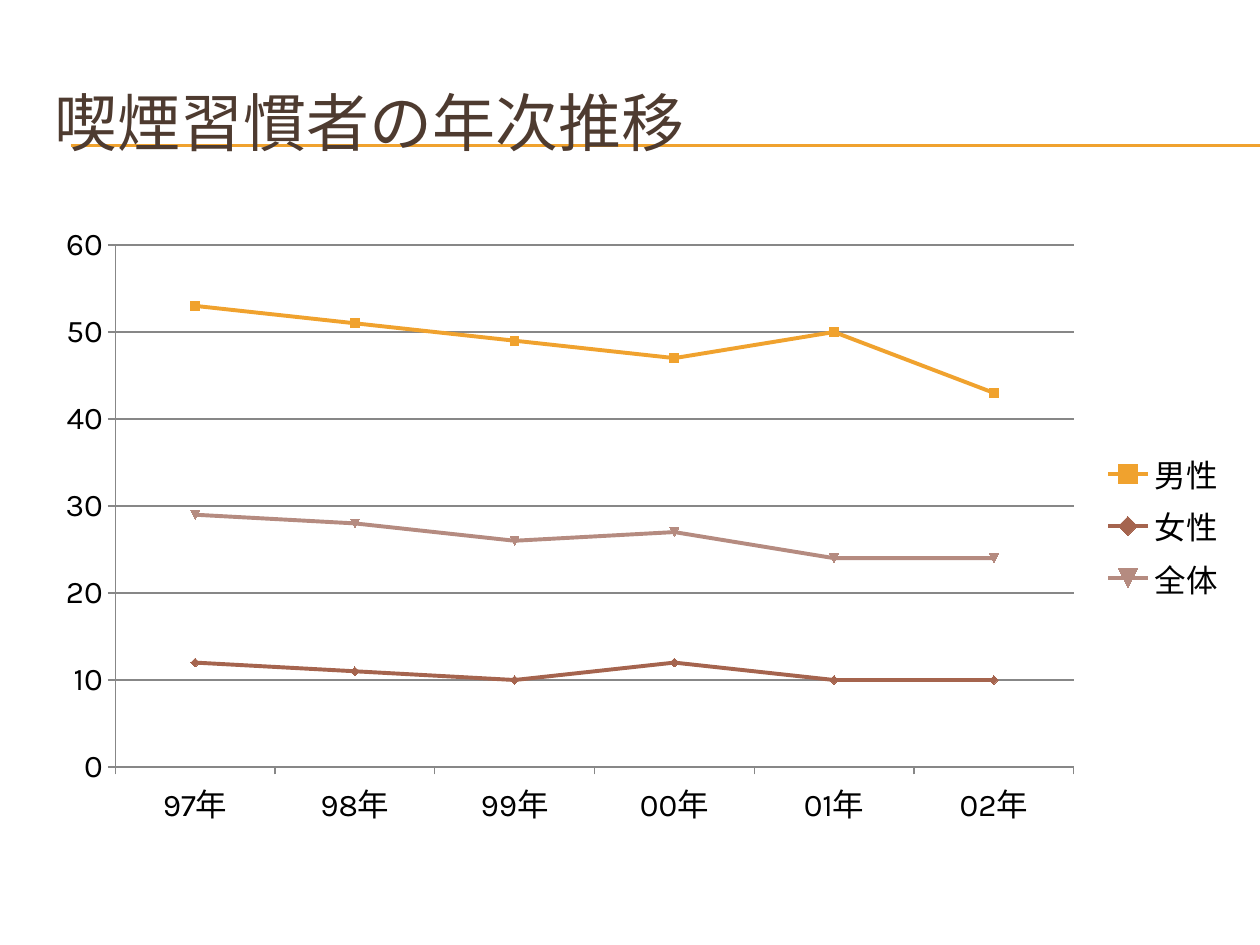
from dataclasses import dataclass

from lxml import etree
from pptx import Presentation
from pptx.chart.data import CategoryChartData
from pptx.dml.color import RGBColor
from pptx.enum.chart import XL_CHART_TYPE, XL_LEGEND_POSITION, XL_TICK_MARK
from pptx.enum.shapes import MSO_CONNECTOR
from pptx.enum.text import MSO_ANCHOR, PP_ALIGN
from pptx.oxml.ns import qn
from pptx.util import Inches, Pt

LINE_MARKERS = XL_CHART_TYPE.LINE_MARKERS
LEGEND_RIGHT = XL_LEGEND_POSITION.RIGHT
TICK_OUTSIDE = XL_TICK_MARK.OUTSIDE
STRAIGHT = MSO_CONNECTOR.STRAIGHT
MIDDLE = MSO_ANCHOR.MIDDLE
LEFT = PP_ALIGN.LEFT

FONT = "Karla"
ACCENT = "F0A22E"
TITLE_COLOR = "4E3B30"
GRID_COLOR = "878787"
TEXT_COLOR = "000000"
YEARS = ["97年", "98年", "99年", "00年", "01年", "02年"]
RULE_HEIGHTS = (1.15, 1.16)


@dataclass
class SmokingRate:
    name: str
    values: tuple[int, ...]
    color: str


RATES = [
    SmokingRate("男性", (53, 51, 49, 47, 50, 43), ACCENT),
    SmokingRate("女性", (12, 11, 10, 12, 10, 10), "A5644E"),
    SmokingRate("全体", (29, 28, 26, 27, 24, 24), "B58B80"),
]


def rgb(color: str) -> RGBColor:
    return RGBColor.from_string(color)


def style_font(font, size: float, color: str) -> None:
    font.name = FONT
    font.size = Pt(size)
    font.color.rgb = rgb(color)


def style_line(line, color: str, width: float) -> None:
    line.color.rgb = rgb(color)
    line.width = Pt(width)


def add_rule(page, top: float) -> None:
    rule = page.shapes.add_connector(
        STRAIGHT, Inches(0.56), Inches(top), Inches(10), Inches(top)
    )
    style_line(rule.line, ACCENT, 0.75)
    properties = rule._element.find(qn("p:spPr"))
    etree.SubElement(properties, qn("a:effectLst"))
    page.shapes._spTree.insert(2, rule._element)


def set_title(page, text: str) -> None:
    title = page.shapes.title
    title.left, title.top = Inches(0.33), Inches(0.5)
    title.width, title.height = Inches(9.5), Inches(0.92)
    title.text_frame.text = text
    title.text_frame.vertical_anchor = MIDDLE
    paragraph = title.text_frame.paragraphs[0]
    paragraph.alignment = LEFT
    style_font(paragraph.font, 36, TITLE_COLOR)


def style_axis(axis) -> None:
    axis.major_tick_mark = TICK_OUTSIDE
    style_line(axis.format.line, GRID_COLOR, 0.75)


def add_rate_chart(page, rates: list[SmokingRate]) -> None:
    data = CategoryChartData(number_format="0")
    data.categories = YEARS
    for rate in rates:
        data.add_series(rate.name, rate.values)
    chart = page.shapes.add_chart(
        LINE_MARKERS, Inches(0.33), Inches(1.7), Inches(9.5), Inches(4.95), data
    ).chart
    style_font(chart.font, 18, TEXT_COLOR)
    chart.has_title = False
    chart.has_legend = True
    chart.legend.position = LEGEND_RIGHT
    chart.legend.include_in_layout = False

    style_axis(chart.category_axis)
    value_axis = chart.value_axis
    style_axis(value_axis)
    value_axis.minimum_scale = 0
    value_axis.maximum_scale = 60
    value_axis.major_unit = 10
    value_axis.has_major_gridlines = True
    style_line(value_axis.major_gridlines.format.line, GRID_COLOR, 0.75)

    plot = chart.plots[0]
    plot.vary_by_categories = False
    for series, rate in zip(plot.series, rates):
        series.smooth = False
        style_line(series.format.line, rate.color, 2.25)
        series.marker.size = 5
        series.marker.format.fill.solid()
        series.marker.format.fill.fore_color.rgb = rgb(rate.color)
        style_line(series.marker.format.line, rate.color, 0.75)


def main() -> None:
    deck = Presentation()
    deck.slide_width, deck.slide_height = Inches(10), Inches(7.5)
    page = deck.slides.add_slide(deck.slide_layouts[5])
    for top in RULE_HEIGHTS:
        add_rule(page, top)
    set_title(page, "喫煙習慣者の年次推移")
    add_rate_chart(page, RATES)
    deck.save("out.pptx")


if __name__ == "__main__":
    main()
